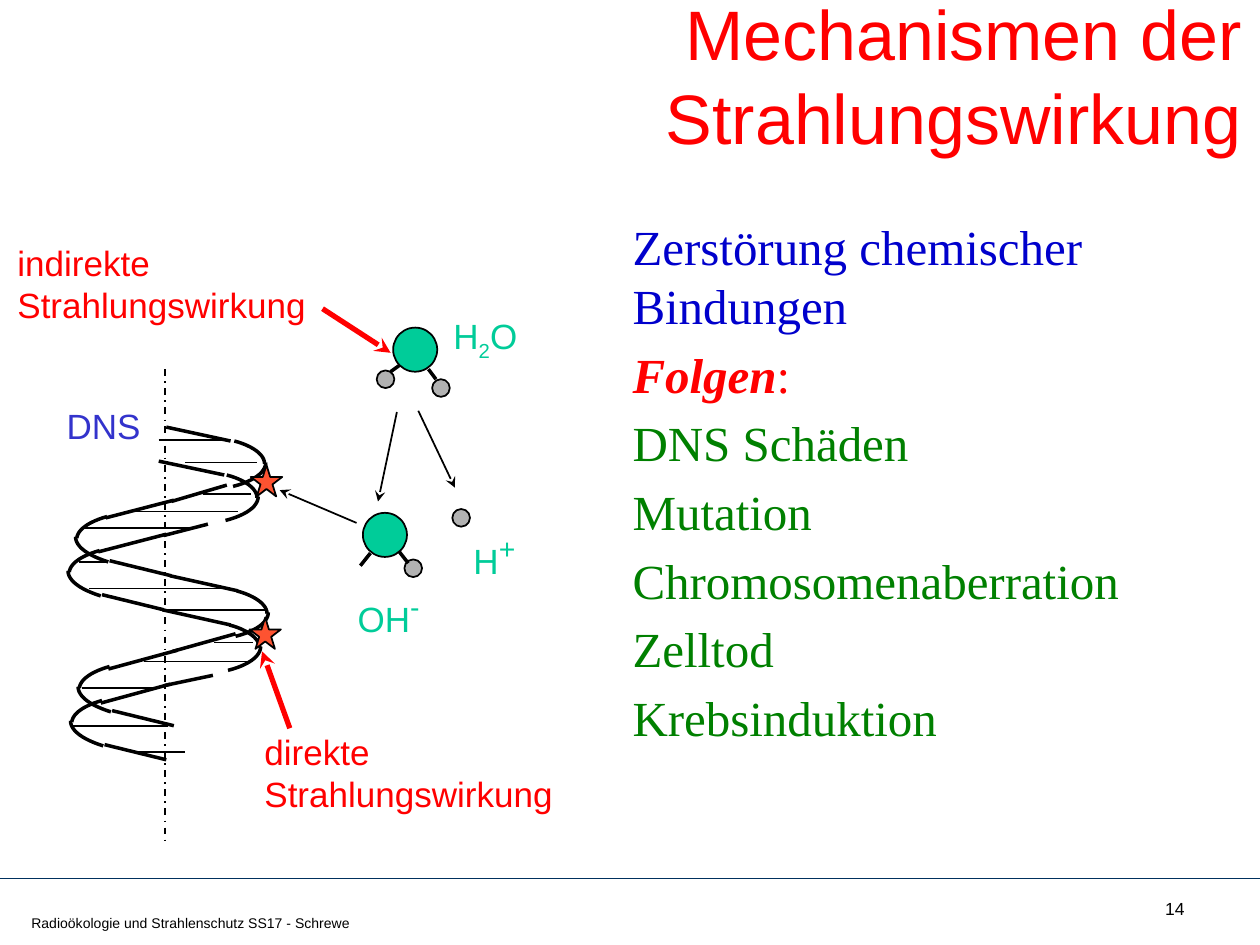
from dataclasses import dataclass
from typing import NamedTuple

from lxml.etree import SubElement as Sub
from pptx import Presentation
from pptx.dml.color import RGBColor as Rgb
from pptx.enum.dml import MSO_LINE as Dash
from pptx.enum.shapes import MSO_CONNECTOR as Conn, MSO_SHAPE as Kind
from pptx.enum.text import MSO_ANCHOR as Anchor, MSO_AUTO_SIZE as Fit, PP_ALIGN as Align
from pptx.oxml.ns import qn
from pptx.util import Emu, Pt

SCALE = 9144


@dataclass(frozen=True)
class Theme:
    sans: str = "Arial"
    serif: str = "Times New Roman"
    black: str = "000000"
    red: str = "FF0000"
    blue: str = "0000CC"
    green: str = "008000"
    teal: str = "00CC99"
    gray: str = "B2B2B2"
    star: str = "FD5331"
    dns: str = "3333CC"
    rule: str = "00305D"
    title: int = 40
    body: int = 28
    label: int = 20
    power: int = 28
    page: int = 10
    foot: int = 8


THEME = Theme()


class Box(NamedTuple):
    x: int
    y: int
    w: int
    h: int


class Line(NamedTuple):
    x1: int
    y1: int
    x2: int
    y2: int
    color: str = THEME.black
    width: float = 1
    tip: str = ""
    dash: bool = False


class Mark(NamedTuple):
    kind: Kind
    box: Box
    fill: str


class Piece(NamedTuple):
    text: str
    base: int = 0
    size: int = THEME.label


class Label(NamedTuple):
    box: Box
    paras: list[list[Piece]]
    color: str
    wrap: bool = True
    align: Align = Align.LEFT
    fit: Fit = Fit.SHAPE_TO_FIT_TEXT


def emu(px: float) -> Emu:
    return Emu(round(px * SCALE))


def place(shape, box: Box) -> None:
    shape.left, shape.top, shape.width, shape.height = map(emu, box)


def style(font, face: str, size: int, color: str) -> None:
    font.name, font.size = face, Pt(size)
    font.color.rgb = Rgb.from_string(color)


def stroke(line, color: str, width: float) -> None:
    line.color.rgb = Rgb.from_string(color)
    line.width = Pt(width)


def draw_line(shapes, item: Line) -> None:
    wire = shapes.add_connector(Conn.STRAIGHT, *map(emu, item[:4]))
    stroke(wire.line, item.color, item.width)
    if item.dash:
        wire.line.dash_style = Dash.DASH_DOT
    props = wire._element.spPr
    if item.tip:
        Sub(props.find(qn("a:ln")), qn(f"a:{item.tip}"), type="stealth")
    Sub(props, qn("a:effectLst"))


def draw_mark(shapes, item: Mark) -> None:
    shape = shapes.add_shape(item.kind, *map(emu, item.box))
    shape.shadow.inherit = False
    shape.fill.solid()
    shape.fill.fore_color.rgb = Rgb.from_string(item.fill)
    stroke(shape.line, THEME.black, 1)


def draw_label(shapes, item: Label) -> None:
    frame = shapes.add_textbox(*map(emu, item.box)).text_frame
    frame.word_wrap, frame.auto_size = item.wrap, item.fit
    frame.text = "\n".join(para[0].text for para in item.paras)
    for para, parts in zip(frame.paragraphs, item.paras):
        para.alignment = item.align
        for part in parts[1:]:
            para.add_run().text = part.text
        for run, part in zip(para.runs, parts):
            style(run.font, THEME.sans, part.size, item.color)
            if part.base:
                run._r.get_or_add_rPr().set("baseline", str(part.base * 1000))


def draw_arc(shapes, knots: list[tuple[int, int]], dx: int, dy: int) -> None:
    steps = 12
    dots = []
    for i in range(steps + 1):
        t = i / steps
        s = 1 - t
        parts = (s**3, 3 * s * s * t, 3 * s * t * t, t**3)
        x = dx + sum(k * p[0] for k, p in zip(parts, knots))
        y = dy + sum(k * p[1] for k, p in zip(parts, knots))
        dots.append((emu(x), emu(y)))
    path = shapes.build_freeform(*dots[0])
    path.add_line_segments(dots[1:], close=False)
    arc = path.convert_to_shape()
    arc.shadow.inherit = False
    arc.fill.background()
    stroke(arc.line, THEME.black, 2)


def ball(x: int, y: int) -> Mark:
    return Mark(Kind.OVAL, Box(x, y, 35, 35), THEME.teal)


def dot(x: int, y: int) -> Mark:
    return Mark(Kind.OVAL, Box(x, y, 14, 14), THEME.gray)


def star(x: int, y: int) -> Mark:
    return Mark(Kind.STAR_5_POINT, Box(x, y, 25, 25), THEME.star)


ARCS = [
    [(61, 427), (62, 420), (71, 414), (85, 410)],
    [(86, 446), (70, 441), (60, 434), (60, 426)],
    [(186, 350), (201, 354), (210, 361), (210, 368)],
    [(211, 367), (211, 375), (201, 382), (185, 386)],
]
TURNS = [(0, 0), (2, 119), (-6, 27), (-4, 146)]
STRANDS = [
    (84, 411, 138, 397), (87, 445, 136, 457), (183, 350, 132, 339), (180, 385, 136, 398),
    (86, 531, 141, 516), (89, 564, 138, 576), (189, 469, 135, 457), (187, 503, 137, 517),
    (78, 438, 132, 424), (81, 472, 130, 484), (178, 377, 126, 366), (165, 416, 130, 425),
    (80, 558, 135, 543), (83, 591, 132, 603), (183, 496, 129, 484), (169, 536, 131, 544),
]
RUNGS = [
    (147, 204, 367), (161, 199, 392), (108, 189, 406), (64, 151, 419), (63, 86, 446),
    (71, 175, 467), (128, 210, 484), (170, 201, 510), (114, 198, 525), (65, 123, 546),
    (58, 133, 576), (126, 179, 349), (104, 147, 597),
]
BONDS = [(340, 293, 346, 301), (317, 290, 310, 295), (317, 438, 324, 447), (294, 439, 286, 449)]
PATHS = [(332, 326, 361, 387), (315, 327, 300, 398), (283, 415, 222, 389)]
RAYS = [(310, 280, 256, 245), (208, 517, 230, 578)]
MARKS = [ball(312, 260), dot(343, 301), dot(299, 294), ball(288, 407), dot(321, 444),
         star(199, 369), star(198, 490)]
LABELS = [
    Label(Box(15, 721, 669, 27), [[Piece("Radioökologie und Strahlenschutz SS17 - Schrewe", 0, THEME.foot)]],
          THEME.black, fit=Fit.NONE),
    Label(Box(767, 708, 183, 25), [[Piece("14", 0, THEME.page)]], THEME.black,
          align=Align.RIGHT, fit=Fit.NONE),
    Label(Box(350, 245, 73, 44), [[Piece("H"), Piece("2", -25), Piece("O")]], THEME.teal, False),
    Label(Box(4, 187, 250, 77), [[Piece("indirekte")], [Piece("Strahlungswirkung")]], THEME.red),
    Label(Box(274, 458, 71, 44), [[Piece("OH"), Piece("-", 30, THEME.power)]], THEME.teal, False),
    Label(Box(43, 316, 97, 44), [[Piece("DNS")]], THEME.dns),
    Label(Box(200, 575, 258, 77), [[Piece("direkte Strahlungswirkung")]], THEME.red),
]
PROTON = Label(Box(366, 412, 56, 44), [[Piece("H"), Piece("+", 30, THEME.power)]], THEME.teal, False)
POINTS = [
    ("Zerstörung chemischer Bindungen", THEME.blue), ("Folgen", THEME.red),
    ("DNS Schäden", THEME.green), ("Mutation", THEME.green),
    ("Chromosomenaberration", THEME.green), ("Zelltod", THEME.green),
    ("Krebsinduktion", THEME.green),
]


def fill_title(shape) -> None:
    place(shape, Box(445, 3, 550, 112))
    frame = shape.text_frame
    frame.text = "Mechanismen der Strahlungswirkung"
    frame.auto_size, frame.vertical_anchor = Fit.NONE, Anchor.MIDDLE
    para = frame.paragraphs[0]
    para.alignment = Align.RIGHT
    style(para.runs[0].font, THEME.sans, THEME.title, THEME.red)


def fill_body(shape) -> None:
    place(shape, Box(492, 167, 508, 500))
    frame = shape.text_frame
    frame.text = "\n".join(text for text, _ in POINTS)
    frame.auto_size = Fit.NONE
    frame.paragraphs[1].add_run().text = ":"
    for i, (para, (_, color)) in enumerate(zip(frame.paragraphs, POINTS)):
        props = para._p.get_or_add_pPr()
        props.set("marL", "0")
        props.set("indent", "0")
        Sub(props, qn("a:buNone"))
        para.space_before = Pt(THEME.body * 0.2 if i else 0)
        for run in para.runs:
            style(run.font, THEME.serif, THEME.body, color)
    lead = frame.paragraphs[1].runs[0].font
    lead.bold = lead.italic = True


def draw_helix(shapes) -> None:
    for dx, dy in TURNS:
        for arc in ARCS:
            draw_arc(shapes, arc, dx, dy)
    for ends in STRANDS:
        draw_line(shapes, Line(*ends, width=2))
    for x1, x2, y in RUNGS:
        draw_line(shapes, Line(x1, y, x2, y))
    draw_line(shapes, Line(131, 293, 131, 670, dash=True))


def main() -> None:
    deck = Presentation()
    deck.slide_width, deck.slide_height = emu(1000), emu(750)
    slide = deck.slides.add_slide(deck.slide_layouts[1])
    shapes = slide.shapes
    fill_title(shapes.title)
    fill_body(slide.placeholders[1])
    draw_line(shapes, Line(0, 697, 1000, 697, THEME.rule, 0.75))
    draw_helix(shapes.add_group_shape().shapes)
    for ends in RAYS:
        draw_line(shapes, Line(*ends, THEME.red, 3, "headEnd"))
    for ends in PATHS:
        draw_line(shapes, Line(*ends, tip="tailEnd"))
    for mark in MARKS:
        draw_mark(shapes, mark)
    for ends in BONDS:
        draw_line(shapes, Line(*ends, width=2))
    for label in LABELS:
        draw_label(shapes, label)
    ion = shapes.add_group_shape().shapes
    draw_mark(ion, dot(359, 404))
    draw_label(ion, PROTON)
    deck.save("out.pptx")


if __name__ == "__main__":
    main()
